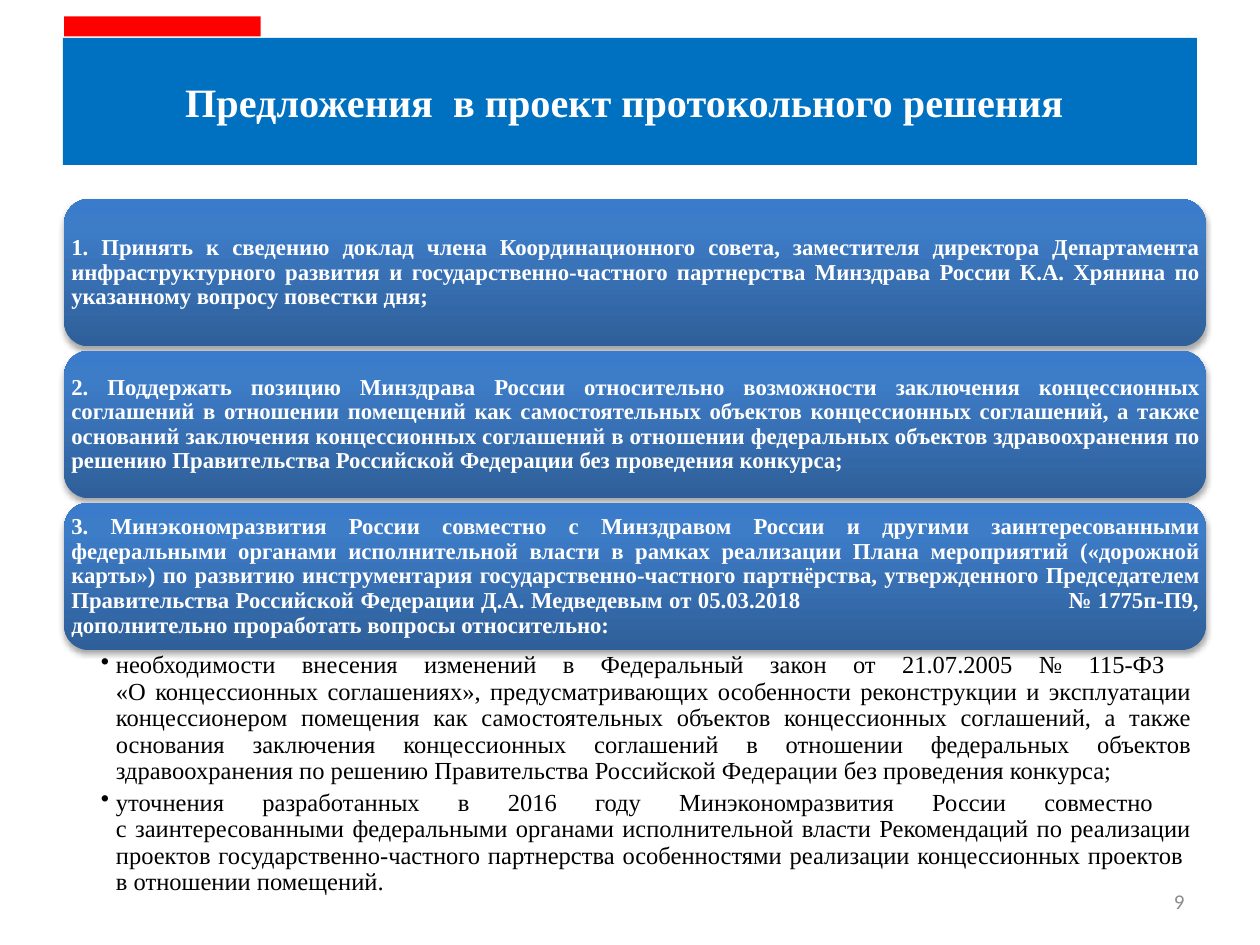
from lxml.etree import SubElement
from pptx import Presentation
from pptx.dml.color import RGBColor
from pptx.enum.shapes import MSO_SHAPE
from pptx.enum.text import MSO_ANCHOR, PP_ALIGN
from pptx.oxml import parse_xml
from pptx.oxml.ns import nsdecls, qn
from pptx.util import Inches, Pt

SERIF = "Times New Roman"
TILE_LEFT, TILE_TOP, TILE_WIDTH, TILE_HEIGHT, TILE_STEP = 0.51, 1.58, 9.06, 1.17, 1.205
GRADIENT = [(0, "2F5F99"), (0.8, "3D7CC7"), (1, "3A7CCB")]
SHADOW = f"""<a:effectLst {nsdecls("a")}>
<a:outerShdw blurRad="40000" dist="23000" dir="5400000" rotWithShape="0">
<a:srgbClr val="000000"><a:alpha val="35000"/></a:srgbClr></a:outerShdw></a:effectLst>"""

TITLE = "Предложения  в проект протокольного решения "
PROPOSALS = [
    "1. Принять к сведению доклад члена Координационного совета, заместителя директора "
    "Департамента инфраструктурного развития и государственно-частного партнерства "
    "Минздрава России К.А. Хрянина по указанному вопросу повестки дня;",
    "2. Поддержать позицию Минздрава России относительно возможности заключения "
    "концессионных соглашений в отношении помещений как самостоятельных объектов "
    "концессионных соглашений, а также оснований заключения концессионных соглашений "
    "в отношении федеральных объектов здравоохранения по решению Правительства "
    "Российской Федерации без проведения конкурса;",
    "3. Минэкономразвития России совместно с Минздравом России и другими "
    "заинтересованными федеральными органами исполнительной власти в рамках реализации "
    "Плана мероприятий («дорожной карты») по развитию инструментария "
    "государственно-частного партнёрства, утвержденного Председателем Правительства "
    "Российской Федерации Д.А. Медведевым от 05.03.2018\t№ 1775п-П9, "
    "дополнительно проработать вопросы относительно:",
]
QUESTIONS = [
    "необходимости внесения изменений в Федеральный закон от 21.07.2005 № 115-ФЗ \n"
    "«О концессионных соглашениях», предусматривающих особенности реконструкции и "
    "эксплуатации концессионером помещения как самостоятельных объектов концессионных "
    "соглашений, а также основания заключения концессионных соглашений в отношении "
    "федеральных объектов здравоохранения по решению Правительства Российской Федерации "
    "без проведения конкурса;",
    "уточнения разработанных в 2016 году Минэкономразвития России совместно \n"
    "с заинтересованными федеральными органами исполнительной власти Рекомендаций по "
    "реализации проектов государственно-частного партнерства особенностями реализации "
    "концессионных проектов \nв отношении помещений.",
]


def rgb(value):
    return RGBColor.from_string(value)


def apply(target, values):
    for key, value in values.items():
        setattr(target, key, value)


class SlideBuilder:
    def __init__(self, slide):
        self.slide = slide
        self.heading = {"name": SERIF, "size": Pt(23), "bold": True}
        self.proposal = {"name": SERIF, "size": Pt(13), "bold": True}
        self.question = {"name": SERIF, "size": Pt(14)}
        self.number = {"name": "Calibri", "size": Pt(12)}
        self.justified = {"alignment": PP_ALIGN.JUSTIFY, "line_spacing": 0.9}

    def fill_text(self, frame, texts, font, color, layout, margins=(0.1, 0.05, 0.1, 0.05),
                  anchor=MSO_ANCHOR.MIDDLE):
        sides = ("margin_left", "margin_top", "margin_right", "margin_bottom")
        apply(frame, {"word_wrap": True, "vertical_anchor": anchor,
                      **dict(zip(sides, map(Inches, margins)))})
        for index, text in enumerate(texts):
            paragraph = frame.add_paragraph() if index else frame.paragraphs[0]
            paragraph.text = text
            apply(paragraph, layout)
            for run in paragraph.runs:
                apply(run.font, font)
                run.font.color.rgb = rgb(color)
        return frame.paragraphs

    def block(self, kind, *box):
        block = self.slide.shapes.add_shape(kind, *map(Inches, box))
        block.shadow.inherit = False
        block.line.fill.background()
        return block

    def banner(self, color, *box, title=None):
        banner = self.block(MSO_SHAPE.RECTANGLE, *box)
        banner.fill.solid()
        banner.fill.fore_color.rgb = rgb(color)
        if title:
            self.fill_text(banner.text_frame, [title], self.heading, "FFFFFF",
                           {"alignment": PP_ALIGN.CENTER})

    def tile(self, text, *box):
        tile = self.block(MSO_SHAPE.ROUNDED_RECTANGLE, *box)
        tile.fill.gradient()
        tile.fill.gradient_angle = 90
        properties = tile.element.spPr
        stops = properties.find(".//" + qn("a:gsLst"))
        for stop in list(stops):
            stops.remove(stop)
        for position, color in GRADIENT:
            stop = SubElement(stops, qn("a:gs"), pos=str(int(position * 100000)))
            SubElement(stop, qn("a:srgbClr"), val=color)
        properties.replace(properties.find(qn("a:effectLst")), parse_xml(SHADOW))
        paragraph = self.fill_text(tile.text_frame, [text], self.proposal, "FFFFFF",
                                   self.justified, (0, 0, 0, 0))[0]
        if "\t" in text:
            tabs = SubElement(paragraph._p.get_or_add_pPr(), qn("a:tabLst"))
            SubElement(tabs, qn("a:tab"), pos=str(Inches(7.87)), algn="l")

    def textbox(self, *box):
        return self.slide.shapes.add_textbox(*map(Inches, box)).text_frame

    def bullets(self, texts, *box):
        layout = {**self.justified, "level": 1, "space_after": Pt(2.8)}
        for paragraph in self.fill_text(self.textbox(*box), texts, self.question, "000000",
                                        layout, (0.29, 0.02, 0.11, 0.02), MSO_ANCHOR.TOP):
            properties = paragraph._p.get_or_add_pPr()
            properties.set("marL", str(Inches(0.12)))
            properties.set("indent", str(Inches(-0.12)))
            SubElement(properties, qn("a:buChar"), char="•")

    def page_number(self, text, *box):
        self.fill_text(self.textbox(*box), [text], self.number, "8C8C8C",
                       {"alignment": PP_ALIGN.RIGHT})


def main():
    presentation = Presentation()
    apply(presentation, {"slide_width": Inches(10), "slide_height": Inches(7.5)})
    builder = SlideBuilder(presentation.slides.add_slide(presentation.slide_layouts[6]))
    builder.page_number("9", 7.17, 6.95, 2.33, 0.4)
    for index, proposal in enumerate(PROPOSALS):
        builder.tile(proposal, TILE_LEFT, TILE_TOP + index * TILE_STEP, TILE_WIDTH, TILE_HEIGHT)
    builder.bullets(QUESTIONS, TILE_LEFT, 5.16, TILE_WIDTH, 1.94)
    builder.banner("0070C0", 0.5, 0.3, 9, 1.01, title=TITLE)
    builder.banner("FF0000", TILE_LEFT, 0.13, 1.56, 0.16)
    presentation.save("out.pptx")


if __name__ == "__main__":
    main()
